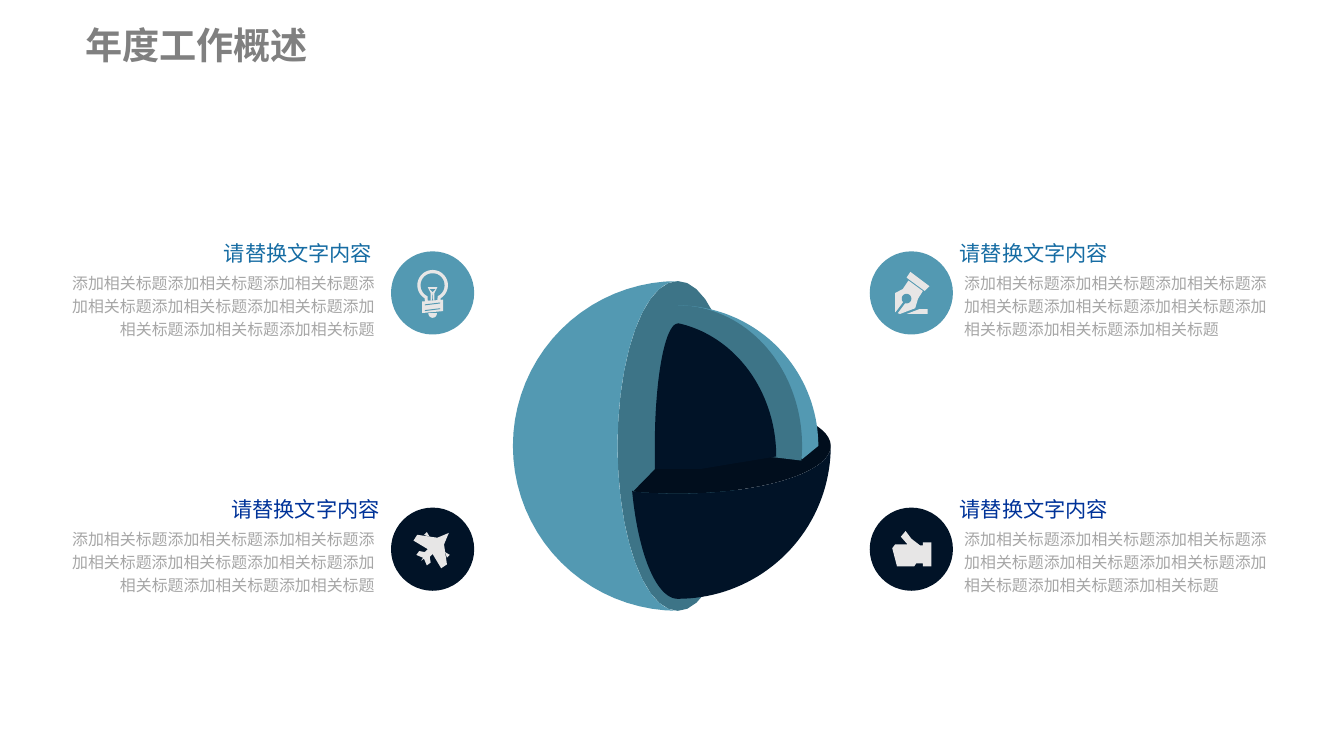
import math

import lxml.etree
import pptx
import pptx.dml.color
import pptx.enum.shapes
import pptx.enum.text
import pptx.oxml.ns
import pptx.util

Cm = pptx.util.Cm
RGBColor = pptx.dml.color.RGBColor
PP_ALIGN = pptx.enum.text.PP_ALIGN
OVAL = pptx.enum.shapes.MSO_SHAPE.OVAL

TEAL = RGBColor(0x53, 0x99, 0xB2)
DARK_TEAL = RGBColor(0x3D, 0x74, 0x87)
NAVY = RGBColor(0x01, 0x13, 0x27)
DEEP_NAVY = RGBColor(0x01, 0x0E, 0x1D)
ICON_GREY = RGBColor(0xE7, 0xE6, 0xE6)
BODY_GREY = RGBColor(0xA6, 0xA6, 0xA6)
TITLE_GREY = RGBColor(0x80, 0x80, 0x80)
HEADING_BLUE = RGBColor(0x16, 0x6C, 0xA3)
HEADING_NAVY = RGBColor(0x00, 0x33, 0x99)

GRID = Cm(2.54) / 100
ARC_STEPS = 40
BADGE_SIZE = 2.21


def arc(radius_x, radius_y, start, end, center_x=0, center_y=0):
    """Return points along an ellipse; degrees run clockwise from the right."""
    angles = [math.radians(start + (end - start) * step / ARC_STEPS)
              for step in range(ARC_STEPS + 1)]
    return [(center_x + radius_x * math.cos(angle), center_y + radius_y * math.sin(angle))
            for angle in angles]


def draw_outline(shapes, points, color, center_x, center_y):
    """Fill a closed outline whose points are GRID units away from the center."""
    corners = [(center_x + x * GRID, center_y + y * GRID) for x, y in points]
    builder = shapes.build_freeform(*corners[0], scale=1.0)
    builder.add_line_segments(corners[1:], close=True)
    shape = builder.convert_to_shape()
    shape.shadow.inherit = False
    shape.fill.solid()
    shape.fill.fore_color.rgb = color
    shape.line.fill.background()


presentation = pptx.Presentation()
presentation.slide_width = Cm(35.71)
presentation.slide_height = Cm(20.09)
slide = presentation.slides.add_slide(presentation.slide_layouts[5])

title = slide.shapes.title
title.left, title.top, title.width, title.height = Cm(2.26), Cm(0.56), Cm(6.43), Cm(1.24)
frame = title.text_frame
frame.margin_left = frame.margin_top = frame.margin_right = frame.margin_bottom = 0
frame.vertical_anchor = pptx.enum.text.MSO_ANCHOR.MIDDLE
texts = [(title, "年度工作概述", 28, TITLE_GREY, PP_ALIGN.LEFT, True, 1.0)]

# Layered sphere, from back to front
sphere = slide.shapes.add_group_shape()
sphere_layers = [
    (arc(63, 172.5, 0, 360), DARK_TEAL),
    (arc(172.5, 172.5, 90, 270) + arc(63, 172.5, 270, 90), TEAL),
    (arc(160, 50, 107, -73), DEEP_NAVY),
    (arc(160, 50, 0, 107) + arc(50, 160, 163, 90) + arc(160, 160, 90, 0), NAVY),
    (arc(147, 147, -90, 0) + [(130, 14)], TEAL),
    (arc(130, 147, -90, 6) + [(0, 0)], DARK_TEAL),
    (arc(127, 142, -79, 0, -24, 11) + [(25, 24), (-24, 24)] + arc(24, 128, 180, 270), NAVY),
]
for points, color in sphere_layers:
    draw_outline(sphere.shapes, points, color, Cm(18.01), Cm(11.85))

# Icon parts: outline around the badge center, and whether it is cut out of the icon
thumb = [([(-6, -19), (-11, -13), (-4, -5), (-17, -5), (-20, -1), (-15, 18), (3, 18), (5, 15),
           (12, 15), (12, 18), (21, 18), (21, -7), (12, -7), (12, -4), (9, -4), (0, -11)], False)]

half_plane = [(17, -17), (5, -12), (-16, -15), (-20, -9), (-5, 0), (-8, 3), (-14, 2),
              (-17, 6), (-10, 9), (-12, 12)]
engine = [(-6, -18), (-9, -15), (-3, -13)]
plane = [(half_plane + [(-y, -x) for x, y in reversed(half_plane)], False),
         (engine, False),
         ([(-y, -x) for x, y in engine], False)]

pen = [([(-17, 20), (-17, 0), (-9, -4), (-3, -13), (12, -2), (7, 6), (4, 16), (-12, 22)], False),
       ([(-17, 21), (-8, 9), (-6, 10), (-15, 22)], True),
       (arc(5, 5, 0, 360, -5, 6), True),
       ([(-5, 22), (17, 22), (17, 17), (8, 17)], False),
       ([(14, -2), (19, -7), (-1, -22), (-5, -16)], False)]

bulb = [(arc(16, 16, 122, 418, 0, -8) + [(8, 9), (-8, 9)], False),
        (arc(12.5, 12.5, 115, 425, 0, -8) + [(5, 8), (-5, 8)], True),
        ([(-5, -6), (5, -6), (2, 0), (2, 8), (-2, 8), (-2, 0)], False),
        ([(-3, -4), (3, -4), (0, -1)], True),
        ([(0, 0), (0.5, 8), (-0.5, 8)], True),
        ([(-11, 9), (11, 7), (11, 19), (-11, 21)], False),
        (arc(4.5, 5, 0, 180, 0, 21), False)]
bulb += [([(-8, y + 2), (8, y), (8, y + 1), (-8, y + 3)], True) for y in (10, 16)]

# Badge left, heading left, body left, body width, alignment
right_column = (23.11, 25.25, 25.37, 8.69, PP_ALIGN.LEFT)
upper_left_column = (10.39, 5.64, 1.65, 8.56, PP_ALIGN.RIGHT)
lower_left_column = (10.39, 5.84, 1.65, 8.56, PP_ALIGN.RIGHT)
upper_row = (6.68, TEAL, HEADING_BLUE)
lower_row = (13.49, NAVY, HEADING_NAVY)
topics = [(right_column, lower_row, thumb), (lower_left_column, lower_row, plane),
          (right_column, upper_row, pen), (upper_left_column, upper_row, bulb)]

for column, row, icon in topics:
    left, heading_left, body_left, body_width, alignment = column
    top, badge_color, heading_color = row
    group = slide.shapes.add_group_shape()
    badge = group.shapes.add_shape(OVAL, Cm(left), Cm(top), Cm(BADGE_SIZE), Cm(BADGE_SIZE))
    badge.shadow.inherit = False
    badge.fill.solid()
    badge.fill.fore_color.rgb = badge_color
    badge.line.fill.background()
    for points, is_cutout in icon:
        draw_outline(group.shapes, points, badge_color if is_cutout else ICON_GREY,
                     Cm(left + BADGE_SIZE / 2), Cm(top + BADGE_SIZE / 2))

    body = slide.shapes.add_textbox(Cm(body_left), Cm(top + 0.36), Cm(body_width), Cm(2.11))
    body.text_frame.word_wrap = True
    heading = slide.shapes.add_textbox(Cm(heading_left), Cm(top - 0.56), Cm(4.5), Cm(1.02))
    heading.text_frame.word_wrap = False
    texts.append((body, "添加相关标题" * 9, 12, BODY_GREY, alignment, False, 1.2))
    texts.append((heading, "请替换文字内容", 16, heading_color, alignment, False, 1.2))

for box, text, size, color, alignment, bold, line_spacing in texts:
    box.text_frame.auto_size = pptx.enum.text.MSO_AUTO_SIZE.SHAPE_TO_FIT_TEXT
    paragraph = box.text_frame.paragraphs[0]
    paragraph.alignment = alignment
    paragraph.line_spacing = line_spacing
    run = paragraph.add_run()
    run.text = text
    run.font.name = "Arial"
    run.font.size = pptx.util.Pt(size)
    run.font.bold = bold
    run.font.color.rgb = color
    lxml.etree.SubElement(run._r.get_or_add_rPr(), pptx.oxml.ns.qn("a:ea"), typeface="Arial")

presentation.save("out.pptx")
